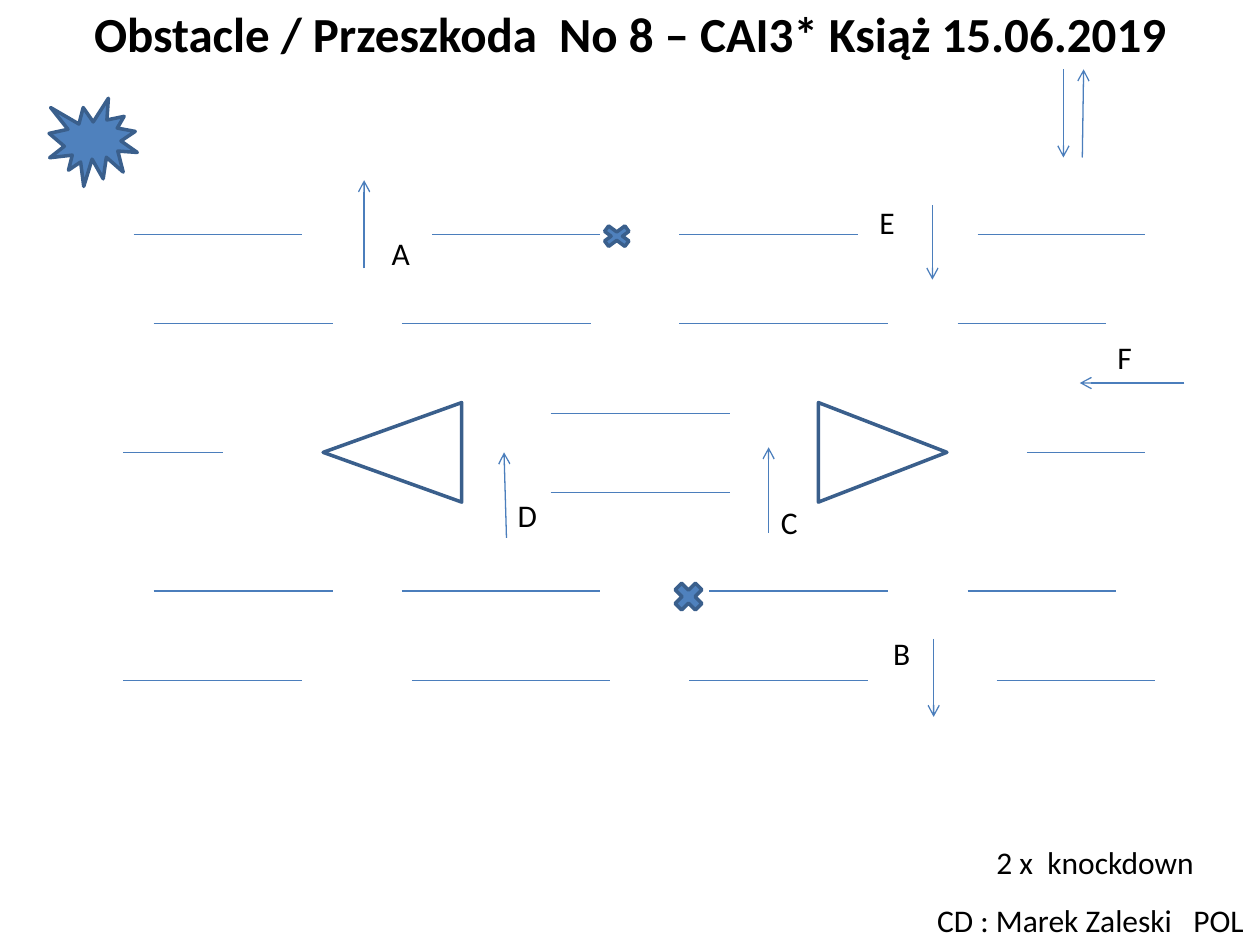
from lxml import etree
from pptx import Presentation, util as u
from pptx.dml.color import RGBColor
from pptx.enum import shapes, text
from pptx.oxml.ns import qn

BLACK = RGBColor(0x00, 0x00, 0x00)
FILL_BLUE = RGBColor(0x4F, 0x81, 0xBD)
RAIL_BLUE = RGBColor(0x4B, 0x7E, 0xBC)
OUTLINE_BLUE = RGBColor(0x3A, 0x5F, 0x8C)
FONT = "Calibri"
SLIDE_WIDTH, SLIDE_HEIGHT = 10, 7.5
LABEL_HEIGHT = 0.4

TITLE = "Obstacle / Przeszkoda  No 8 – CAI3* Książ 15.06.2019"

# Height of each row of rails, with the start and end of every rail in it
RAIL_ROWS = {
    1.86: [(1.06, 2.4), (3.43, 4.76), (5.39, 6.81), (7.76, 9.09)],
    2.57: [(1.22, 2.64), (3.19, 4.69), (5.39, 7.05), (7.6, 8.78)],
    3.28: [(4.37, 5.79)],
    3.59: [(0.98, 1.77), (8.15, 9.09)],
    3.91: [(4.37, 5.79)],
    4.69: [(1.22, 2.64), (3.19, 4.76), (5.63, 7.05), (7.68, 8.86)],
    5.4: [(0.98, 2.4), (3.27, 4.84), (5.47, 6.89), (7.91, 9.17)],
}

# Driving directions: start and end point
ARROWS = [
    ((8.59, 1.25), (8.6, 0.55)),
    ((8.44, 0.55), (8.44, 1.25)),
    ((2.89, 2.13), (2.89, 1.43)),
    ((7.41, 5.07), (7.41, 5.69)),
    ((6.1, 4.23), (6.1, 3.55)),
    ((4.02, 4.27), (4.0, 3.59)),
    ((7.4, 1.63), (7.4, 2.22)),
    ((9.4, 3.04), (8.57, 3.04)),
]

# Text, left, top, width
LABELS = [
    ("A", 3.01, 1.81, 0.35),
    ("B", 6.99, 4.98, 0.34),
    ("C", 6.1, 3.94, 0.34),
    ("D", 4.01, 3.89, 0.36),
    ("E", 6.88, 1.56, 0.32),
    ("F", 8.77, 2.63, 0.32),
    ("2 x  knockdown", 7.81, 6.64, 1.79),
    ("CD : Marek Zaleski   POL", 7.34, 7.1, 2.66),
]

# Preset, left, top, width, height, rotation, fill
SHAPE = shapes.MSO_SHAPE
OBSTACLES = [
    (SHAPE.ISOSCELES_TRIANGLE, 2.72, 3.04, 0.79, 1.1, 270, None),
    (SHAPE.ISOSCELES_TRIANGLE, 6.61, 3.08, 0.79, 1.02, 90, None),
    (SHAPE.EXPLOSION1, 0.39, 0.78, 0.7, 0.7, 0, FILL_BLUE),
    (SHAPE.MATH_MULTIPLY, 4.74, 1.76, 0.31, 0.23, 0, FILL_BLUE),
    (SHAPE.MATH_MULTIPLY, 5.31, 4.58, 0.31, 0.31, 0, FILL_BLUE),
]


def inches(*lengths):
    return [u.Inches(length) for length in lengths]


def add_text(paragraph, wording, size, bold=False):
    run = paragraph.add_run()
    run.text = wording
    run.font.name = FONT
    run.font.size = u.Pt(size)
    run.font.bold = bold
    run.font.color.rgb = BLACK


def add_title(slide):
    title = slide.shapes.title
    title.left, title.top, title.width, title.height = inches(0, 0, SLIDE_WIDTH, 0.52)
    frame = title.text_frame
    frame.auto_size = text.MSO_AUTO_SIZE.NONE
    frame.vertical_anchor = text.MSO_ANCHOR.MIDDLE
    paragraph = frame.paragraphs[0]
    paragraph.alignment = text.PP_ALIGN.CENTER
    add_text(paragraph, TITLE, 28, bold=True)


def add_line(slide, start, end, arrow=False):
    connector = slide.shapes.add_connector(
        shapes.MSO_CONNECTOR.STRAIGHT, *inches(*start, *end))
    connector.line.color.rgb = RAIL_BLUE
    connector.line.width = u.Pt(0.75)
    if arrow:
        etree.SubElement(connector.line._get_or_add_ln(), qn("a:tailEnd"), type="arrow")
    etree.SubElement(connector._element.spPr, qn("a:effectLst"))


def add_obstacle(slide, preset, left, top, width, height, rotation, fill):
    shape = slide.shapes.add_shape(preset, *inches(left, top, width, height))
    shape.rotation = rotation
    shape.shadow.inherit = False
    shape.line.color.rgb = OUTLINE_BLUE
    shape.line.width = u.Pt(2)
    if fill is None:
        shape.fill.background()
    else:
        shape.fill.solid()
        shape.fill.fore_color.rgb = fill


def add_label(slide, wording, left, top, width):
    box = slide.shapes.add_textbox(*inches(left, top, width, LABEL_HEIGHT))
    frame = box.text_frame
    frame.word_wrap = False
    frame.auto_size = text.MSO_AUTO_SIZE.SHAPE_TO_FIT_TEXT
    add_text(frame.paragraphs[0], wording, 18)


def main():
    presentation = Presentation()
    presentation.slide_width, presentation.slide_height = inches(SLIDE_WIDTH, SLIDE_HEIGHT)
    slide = presentation.slides.add_slide(presentation.slide_layouts.get_by_name("Title Only"))
    add_title(slide)
    for height, rails in RAIL_ROWS.items():
        for left, right in rails:
            add_line(slide, (left, height), (right, height))
    for start, end in ARROWS:
        add_line(slide, start, end, arrow=True)
    for obstacle in OBSTACLES:
        add_obstacle(slide, *obstacle)
    for label in LABELS:
        add_label(slide, *label)
    presentation.save("out.pptx")


if __name__ == "__main__":
    main()
